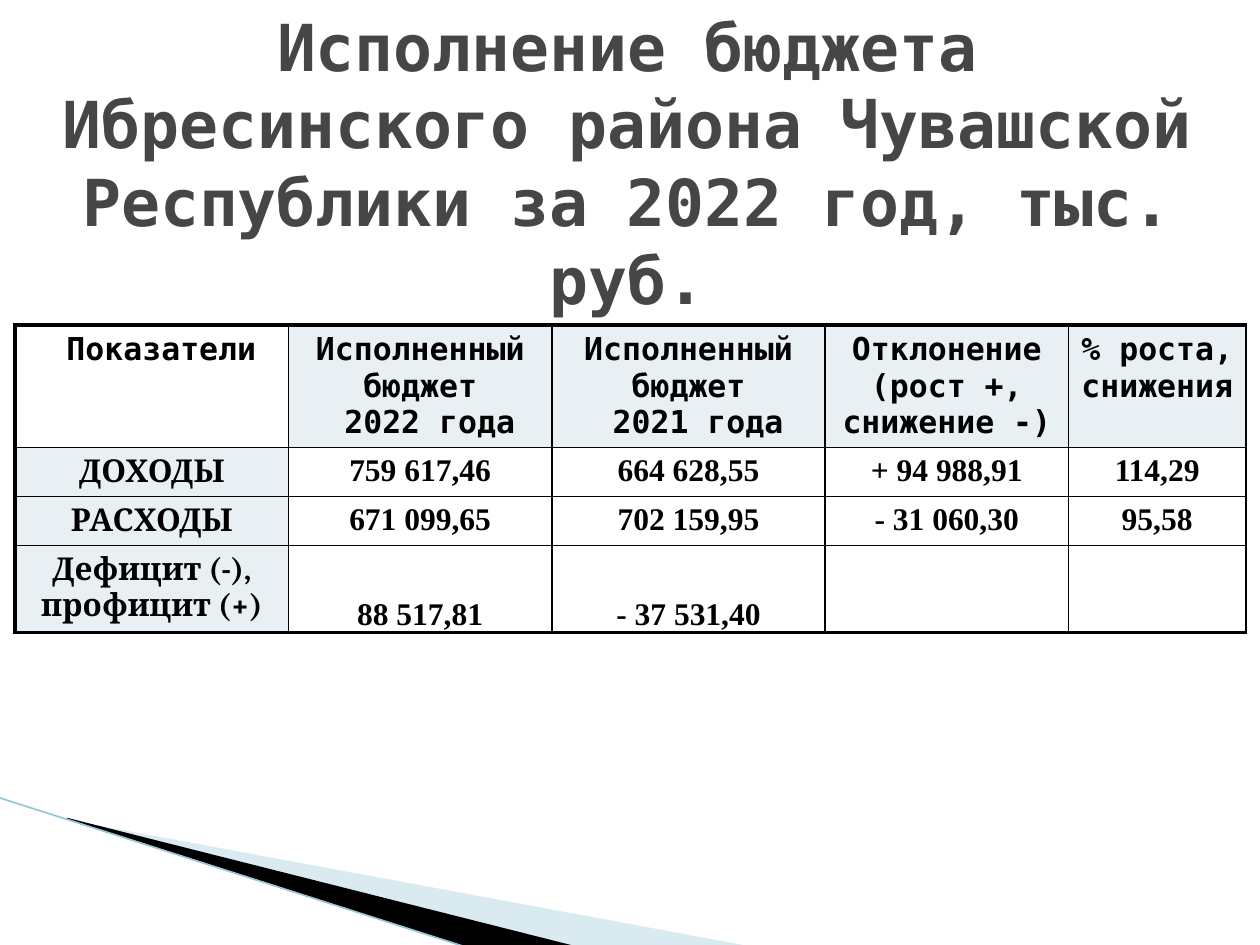
import pptx
import pptx.util
import pptx.dml.color
import pptx.enum.shapes
import pptx.enum.text
import pptx.oxml.ns
import lxml.etree
from dataclasses import dataclass

Pt = pptx.util.Pt
Inches = pptx.util.Inches
qn = pptx.oxml.ns.qn
Align = pptx.enum.text.PP_ALIGN
Anchor = pptx.enum.text.MSO_ANCHOR


@dataclass(frozen=True)
class Theme:
    width: float = 10
    height: float = 7.5
    gray: str = "464646"
    black: str = "000000"
    tint: str = "E8F0F4"
    wedge: str = "A0CBDC"
    edge: str = "97C5D8"
    mono: str = "DejaVu Sans Mono"
    label: str = "Cambria"
    number: str = "Times New Roman"
    title: float = 37
    body: float = 18
    thin: float = 1
    thick: float = 2.25


THEME = Theme()
COLS = [2.17, 2.09, 2.17, 1.93, 1.41]
ROWS = [0.79, 0.32, 0.32, 0.69]
CELLS = [
    [[" Показатели"], ["Исполненный бюджет", " 2022 года"],
     ["Исполненный бюджет", " 2021 года"],
     ["Отклонение (рост +, снижение -)"], ["% роста, снижения"]],
    [["ДОХОДЫ"], ["759 617,46"], ["664 628,55"], ["+ 94 988,91"], ["114,29"]],
    [["РАСХОДЫ"], ["671 099,65"], ["702 159,95"], ["- 31 060,30"], ["95,58"]],
    [["Дефицит (-), профицит (+)"], ["88 517,81"], ["- 37 531,40"], [], []],
]


def across(share):
    return Inches(THEME.width * share / 100)


def down(share):
    return Inches(THEME.height * share / 100)


def rgb(code):
    return pptx.dml.color.RGBColor.from_string(code)


def add_run(para, text, face, size, color):
    para.alignment = Align.CENTER
    run = para.add_run()
    run.text = text
    font = run.font
    font.name, font.size, font.bold = face, Pt(size), True
    font.color.rgb = rgb(color)


def add_title(slide, text):
    title = slide.shapes.title
    title.left, title.top = across(2.8), down(8)
    title.width, title.height = across(94), down(18.27)
    frame = title.text_frame
    frame.auto_size = pptx.enum.text.MSO_AUTO_SIZE.NONE
    frame.word_wrap = True
    frame.vertical_anchor = Anchor.MIDDLE
    add_run(frame.paragraphs[0], text, THEME.mono, THEME.title, THEME.gray)


def add_wedge(slide, spots, color, alpha=None):
    points = [(across(x), down(y)) for x, y in spots]
    pen = slide.shapes.build_freeform(*points[0])
    pen.add_line_segments(points[1:], close=True)
    shape = pen.convert_to_shape()
    shape.shadow.inherit = False
    shape.line.fill.background()
    shape.fill.solid()
    shape.fill.fore_color.rgb = rgb(color)
    if alpha:
        tone = shape.fill._xPr.find(".//" + qn("a:srgbClr"))
        lxml.etree.SubElement(tone, qn("a:alpha"), val=str(alpha * 1000))


def add_edge(slide, start, end):
    line = slide.shapes.add_connector(
        pptx.enum.shapes.MSO_CONNECTOR.STRAIGHT,
        across(start[0]), down(start[1]), across(end[0]), down(end[1]))
    line.line.color.rgb = rgb(THEME.edge)
    line.line.width = Pt(0.95)
    lxml.etree.SubElement(line._element.spPr, qn("a:effectLst"))


def set_border(cell, widths):
    props = cell._tc.get_or_add_tcPr()
    for spot, (side, width) in enumerate(widths.items()):
        line = lxml.etree.Element(qn("a:ln" + side), w=str(Pt(width)))
        fill = lxml.etree.SubElement(line, qn("a:solidFill"))
        lxml.etree.SubElement(fill, qn("a:srgbClr"), val=THEME.black)
        props.insert(spot, line)


def fill_cell(cell, row, col):
    face = THEME.mono if row == 0 else THEME.label if col == 0 else THEME.number
    frame = cell.text_frame
    for spot, text in enumerate(CELLS[row][col]):
        para = frame.add_paragraph() if spot else frame.paragraphs[0]
        add_run(para, text, face, THEME.body, THEME.black)
    if (row == 0) != (col == 0):
        cell.fill.solid()
        cell.fill.fore_color.rgb = rgb(THEME.tint)
    else:
        cell.fill.background()
    last = len(ROWS) - 1
    if row == last and col in (1, 2):
        cell.vertical_anchor = Anchor.BOTTOM
        cell.margin_left = cell.margin_right = cell.margin_top = Inches(0.01)
        cell.margin_bottom = 0
    set_border(cell, {
        "L": THEME.thin if col else THEME.thick,
        "R": THEME.thin,
        "T": THEME.thin if row else THEME.thick,
        "B": THEME.thick if row == last else THEME.thin,
    })


def add_grid(slide):
    frame = slide.shapes.add_table(
        len(ROWS), len(COLS), across(1.2), down(34.4), across(97.6), down(33.33))
    table = frame.table
    table.first_row = table.horz_banding = False
    for col, width in zip(table.columns, COLS):
        col.width = Inches(width)
    for row, height in zip(table.rows, ROWS):
        row.height = Inches(height)
    for row in range(len(ROWS)):
        for col in range(len(COLS)):
            fill_cell(table.cell(row, col), row, col)
    frame.height = Inches(2.5)


def main():
    deck = pptx.Presentation()
    deck.slide_width = Inches(THEME.width)
    deck.slide_height = Inches(THEME.height)
    slide = deck.slides.add_slide(deck.slide_layouts[5])
    add_wedge(slide, [(5.5, 86.8), (59.5, 100.13), (45.6, 100.13), (5.5, 86.67)],
              THEME.wedge, 40)
    add_wedge(slide, [(5.3, 86.53), (45.7, 100.13), (37.2, 100.27), (5.4, 86.67)],
              THEME.black)
    add_edge(slide, (-0.1, 84.4), (37.1, 100.27))
    add_title(slide, "Исполнение бюджета Ибресинского района "
                     "Чувашской Республики за 2022 год, тыс. руб.")
    add_grid(slide)
    deck.save("out.pptx")


if __name__ == "__main__":
    main()
